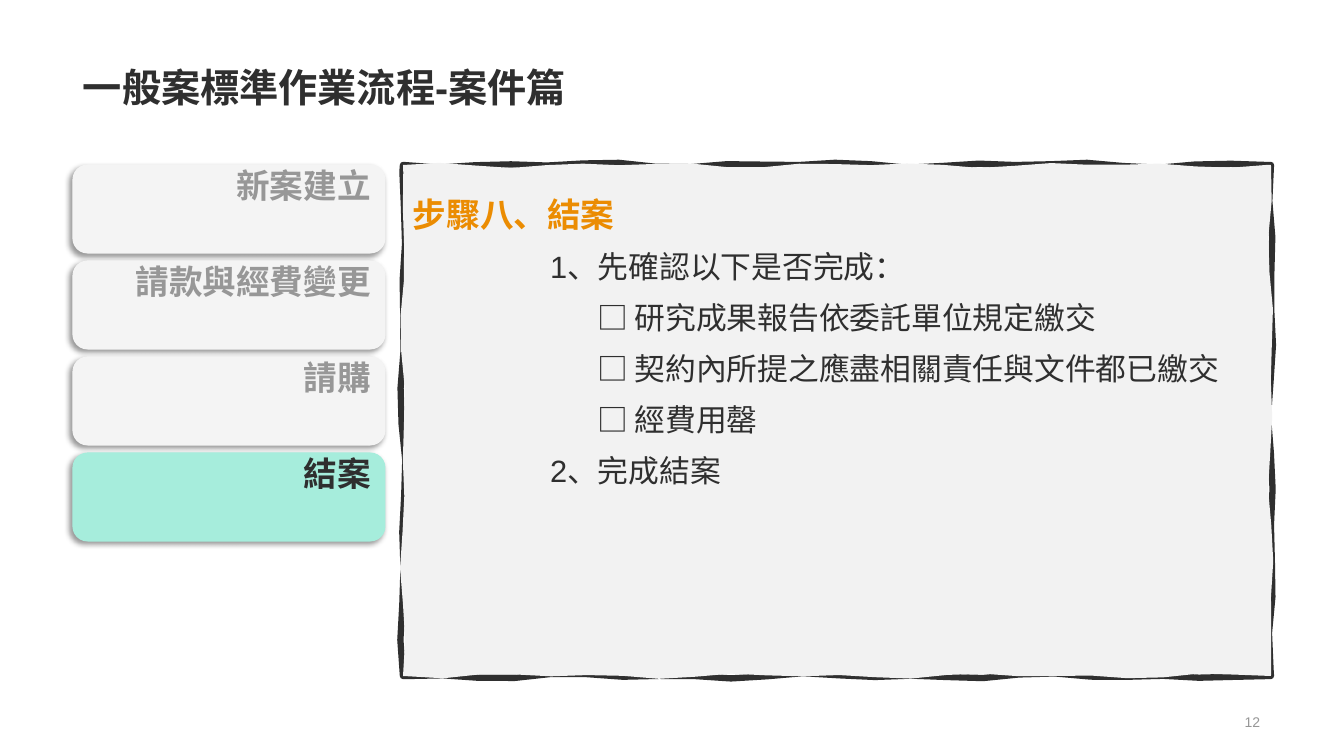
import math

import pptx
import pptx.dml.color
import pptx.enum.shapes
import pptx.enum.text
import pptx.oxml
import pptx.oxml.ns
import pptx.util

PX = 914400 / 100.8
THEME = {
    "ink": "2F2F2F", "muted": "979797", "accent": "EB8C02",
    "panel": "F2F2F2", "step": "F4F4F4", "current": "A6EDDC",
    "title_pt": 28, "heading_pt": 24, "body_pt": 22, "number_pt": 10,
    "latin": "Arial", "cjk": "Noto Sans CJK SC",
}
SHADOW = (
    '<a:outerShdw xmlns:a="http://schemas.openxmlformats.org/drawingml/2006/main" '
    'blurRad="50800" dist="38100" dir="8100000" algn="tr" rotWithShape="0">'
    '<a:srgbClr val="000000"><a:alpha val="40000"/></a:srgbClr></a:outerShdw>'
)
ALIGN = pptx.enum.text.PP_ALIGN
ANCHOR = pptx.enum.text.MSO_ANCHOR
RGB = pptx.dml.color.RGBColor.from_string


def px(n):
    return pptx.util.Emu(round(n * PX))


def add_text(p, text, size, color="ink", font="latin", bold=False,
             align=ALIGN.LEFT, spacing=0.9, left=0, hanging=0):
    """Fill one paragraph; left and hanging indents are in px."""
    if left:
        pPr = p._p.get_or_add_pPr()
        pPr.set("marL", str(px(left)))
        pPr.set("indent", str(-px(hanging)))
    p.alignment = align
    p.line_spacing = spacing
    r = p.add_run()
    r.text = text
    r.font.size = pptx.util.Pt(THEME[size])
    r.font.bold = bold
    r.font.color.rgb = RGB(THEME[color])
    r.font.name = THEME[font]
    ea = pptx.oxml.parse_xml(
        '<a:ea xmlns:a="http://schemas.openxmlformats.org/drawingml/2006/main"/>')
    ea.set("typeface", THEME["cjk"])
    r._r.get_or_add_rPr().append(ea)


prs = pptx.Presentation()
prs.slide_width, prs.slide_height = px(1344), px(756)
s = prs.slides.add_slide(prs.slide_layouts[6])

# Title and slide number
for text, box, anchor, fmt in (
    ("一般案標準作業流程-案件篇", (73, 0, 1197, 113), ANCHOR.BOTTOM,
     dict(size="title_pt", bold=True)),
    ("12", (977, 710, 293, 24), ANCHOR.MIDDLE,
     dict(size="number_pt", color="muted", align=ALIGN.RIGHT, spacing=1.0)),
):
    tf = s.shapes.add_textbox(*map(px, box)).text_frame
    tf.word_wrap = True
    tf.vertical_anchor = anchor
    tf.margin_top = tf.margin_bottom = px(2)
    add_text(tf.paragraphs[0], text, **fmt)

# Hand-drawn panel: the wavy fill covers part of the wavy stroke
LEFT, TOP, WIDTH, HEIGHT = 403, 165, 868, 511
FINE = 20  # drawing units per px
STEP = 36  # px between outline points
edges = (
    (LEFT, TOP, 1, 0, WIDTH),
    (LEFT + WIDTH, TOP, 0, 1, HEIGHT),
    (LEFT + WIDTH, TOP + HEIGHT, -1, 0, WIDTH),
    (LEFT, TOP + HEIGHT, 0, -1, HEIGHT),
)
for layer, phase in (("stroke", 0), ("fill", 2.4)):
    points = []
    for side, (x, y, dx, dy, length) in enumerate(edges):
        for d in range(0, length, STEP):
            taper = min(1, d / STEP, (length - d) / STEP)
            wave = taper * (1.6 * math.sin(d / 19 + phase + side)
                            + 1.4 * math.sin(d / 37 + 2 * phase + side))
            points.append(((x + dx * d - dy * wave) * FINE,
                           (y + dy * d + dx * wave) * FINE))
    builder = s.shapes.build_freeform(*points[0], scale=PX / FINE)
    builder.add_line_segments(points[1:], close=True)
    panel = builder.convert_to_shape()
    panel.shadow.inherit = False
    if layer == "stroke":
        panel.fill.background()
        panel.line.color.rgb = RGB(THEME["ink"])
        panel.line.width = pptx.util.Pt(4.5)
    else:
        panel.fill.solid()
        panel.fill.fore_color.rgb = RGB(THEME["panel"])
        panel.line.fill.background()

tf = panel.text_frame
tf.word_wrap = True
tf.vertical_anchor = ANCHOR.TOP
tf.margin_left = px(413) - panel.left
tf.margin_top = px(183) - panel.top
tf.margin_right = px(10)
pitch = px(51)
add_text(tf.paragraphs[0], "步驟八、結案", "heading_pt", color="accent",
         font="cjk", bold=True, spacing=pitch)
for text in (
    "1、先確認以下是否完成：",
    "\t□ 研究成果報告依委託單位規定繳交",
    "\t□ 契約內所提之應盡相關責任與文件都已繳交",
    "\t□ 經費用罄",
    "2、完成結案",
):
    add_text(tf.add_paragraph(), text, "body_pt", spacing=pitch,
             left=184, hanging=47)

# Process steps, the last one current
steps = ("新案建立", "請款與經費變更", "請購", "結案")
for i, step in enumerate(steps):
    current = step == steps[-1]
    sp = s.shapes.add_shape(pptx.enum.shapes.MSO_SHAPE.ROUNDED_RECTANGLE,
                            px(73), px(165 + 96 * i), px(312), px(88))
    color = RGB(THEME["current" if current else "step"])
    sp.fill.solid()
    sp.fill.fore_color.rgb = color
    sp.line.color.rgb = color
    sp.line.width = pptx.util.Pt(0.75)
    sp.shadow.inherit = False
    effects = sp._element.spPr.find(pptx.oxml.ns.qn("a:effectLst"))
    effects.append(pptx.oxml.parse_xml(SHADOW))
    tf = sp.text_frame
    tf.word_wrap = True
    tf.vertical_anchor = ANCHOR.TOP
    tf.margin_top = 0
    add_text(tf.paragraphs[0], step, "heading_pt", bold=True,
             color="ink" if current else "muted", align=ALIGN.RIGHT)

prs.save("out.pptx")
